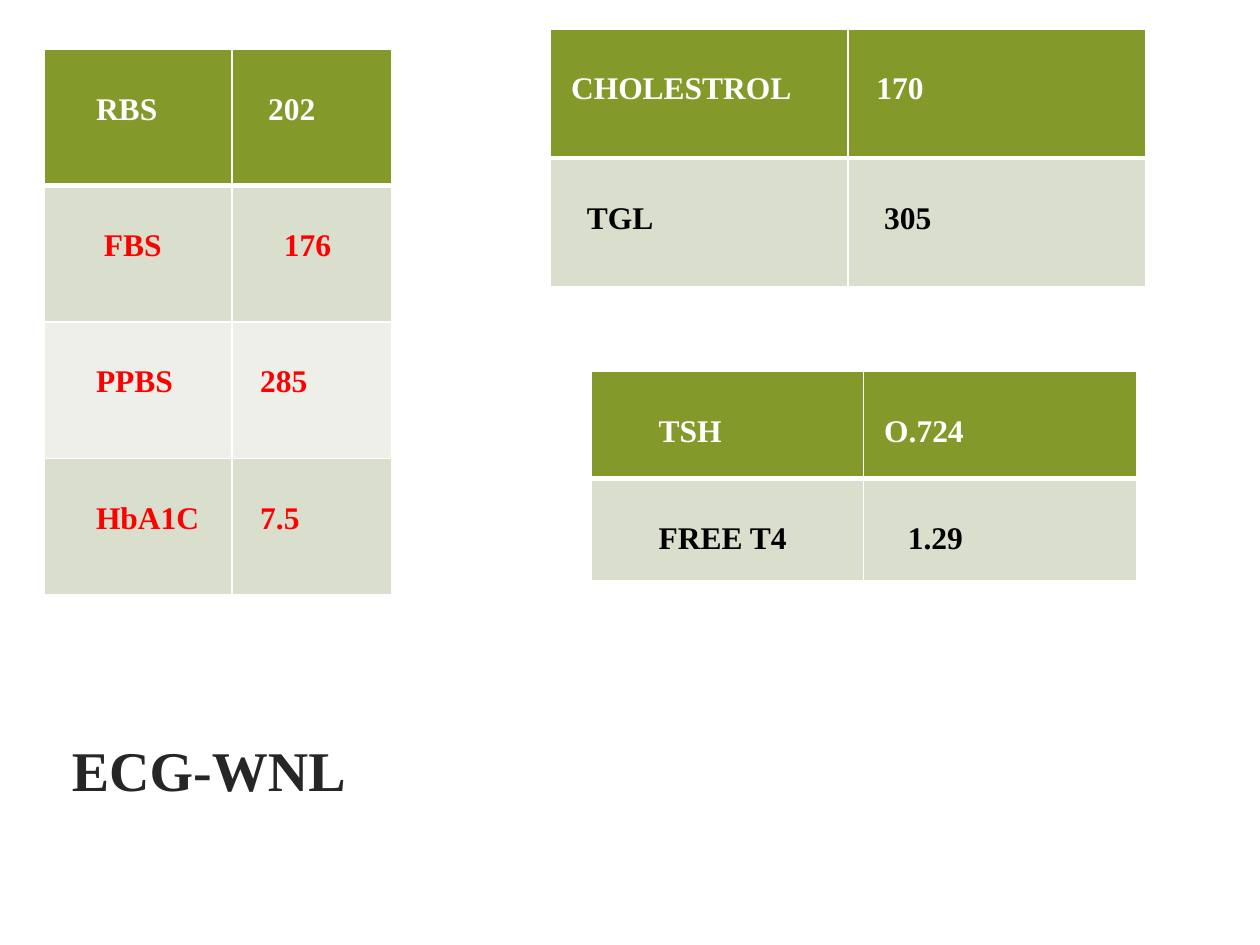
from dataclasses import dataclass
from lxml.etree import SubElement
from pptx import Presentation
from pptx.dml.color import RGBColor
from pptx.enum.text import MSO_ANCHOR, PP_ALIGN
from pptx.oxml.ns import qn
from pptx.util import Inches, Pt


@dataclass(frozen=True)
class Theme:
    font: str = "Times New Roman"
    title_size: int = 32
    cell_size: int = 18
    title: str = "262626"
    header: str = "83992A"
    bands: tuple = ("D9DECD", "EDEFE8")
    white: str = "FFFFFF"
    black: str = "000000"
    alert: str = "FF0000"
    thin: int = 1
    thick: int = 3


@dataclass(frozen=True)
class Box:
    column: float
    row: float
    columns: float
    rows: float

    def place(self):
        return [Inches(GRID * count) for count in (self.column, self.row, self.columns, self.rows)]


THEME = Theme()
GRID = 0.1
INDENT_STEP = 0.0625


def add_run(para, text, size, color):
    span = para.add_run()
    span.text = text
    span.font.name = THEME.font
    span.font.size = Pt(size)
    span.font.bold = True
    span.font.color.rgb = RGBColor.from_string(color)


def add_borders(cell, widths):
    properties = cell._tc.get_or_add_tcPr()
    for index, (side, width) in enumerate(zip("LRTB", widths)):
        line = SubElement(properties, qn(f"a:ln{side}"), w=str(Pt(width)))
        fill = SubElement(line, qn("a:solidFill"))
        SubElement(fill, qn("a:srgbClr"), val=THEME.white)
        properties.insert(index, line)


def fill_cell(cell, text, steps, row, color):
    header = row == 0
    cell.margin_left = Inches(0.1 + steps * INDENT_STEP)
    cell.margin_right = 0
    cell.margin_top = Inches(0.34)
    cell.fill.solid()
    fill = THEME.header if header else THEME.bands[(row - 1) % 2]
    cell.fill.fore_color.rgb = RGBColor.from_string(fill)
    top = THEME.thick if row == 1 else THEME.thin
    bottom = THEME.thick if header else THEME.thin
    add_borders(cell, (THEME.thin, THEME.thin, top, bottom))
    add_run(cell.text_frame.paragraphs[0], text, THEME.cell_size, THEME.white if header else color)


def add_results(page, box, column_shares, row_shares, results, color):
    left, top, width, height = box.place()
    table = page.shapes.add_table(len(results), len(column_shares), left, top, width, height).table
    table.horz_banding = False
    for column, share in zip(table.columns, column_shares):
        column.width = int(width * share)
    for row, share in zip(table.rows, row_shares):
        row.height = int(height * share)
    for row, result in enumerate(results):
        for column, (text, steps) in enumerate(result):
            fill_cell(table.cell(row, column), text, steps, row, color)


def add_title(page, box, text):
    title = page.shapes.title
    title.left, title.top, title.width, title.height = box.place()
    frame = title.text_frame
    frame.word_wrap = True
    frame.vertical_anchor = MSO_ANCHOR.MIDDLE
    para = frame.paragraphs[0]
    para.alignment = PP_ALIGN.LEFT
    add_run(para, text, THEME.title_size, THEME.title)


def main():
    deck = Presentation()
    deck.slide_width, deck.slide_height = Inches(10), Inches(7.5)
    page = deck.slides.add_slide(deck.slide_layouts[5])
    add_title(page, Box(4.7, 53.9, 74.4, 14.3), "ECG-WNL")
    sugar = [
        (("RBS", 5), ("202", 3)),
        (("FBS", 6), ("176", 5)),
        (("PPBS", 5), ("285", 2)),
        (("HbA1C", 5), ("7.5", 2)),
    ]
    lipids = [(("CHOLESTROL", 1), ("170", 2)), (("TGL", 3), ("305", 3))]
    thyroid = [(("TSH", 7), ("O.724", 1)), (("FREE T4", 7), ("1.29", 4))]
    halves = (0.5, 0.5)
    add_results(page, Box(3.5, 3.9, 27.6, 43.3), (0.54, 0.46), [0.25] * 4, sugar, THEME.alert)
    add_results(page, Box(43.7, 2.3, 47.2, 20.5), halves, halves, lipids, THEME.black)
    add_results(page, Box(46.9, 29.5, 43.3, 16.6), halves, (0.51, 0.49), thyroid, THEME.black)
    deck.save("out.pptx")


if __name__ == "__main__":
    main()
